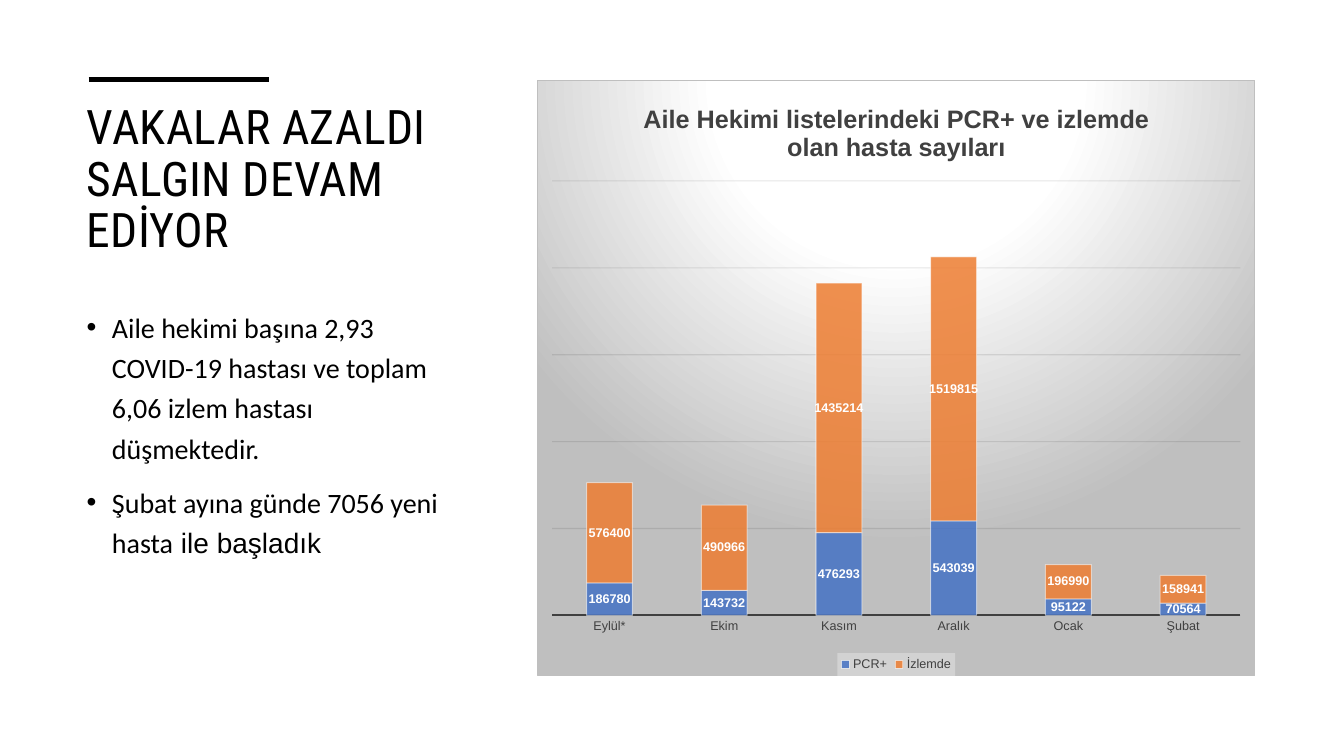
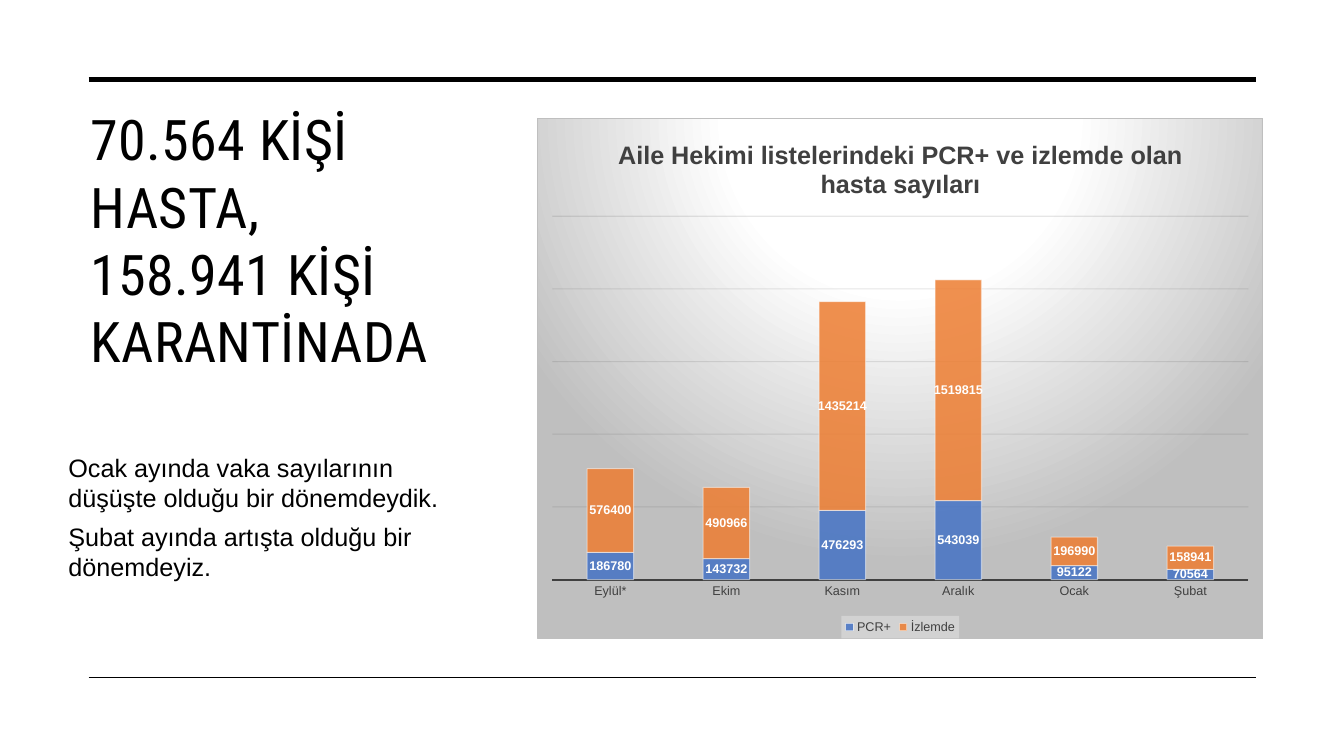
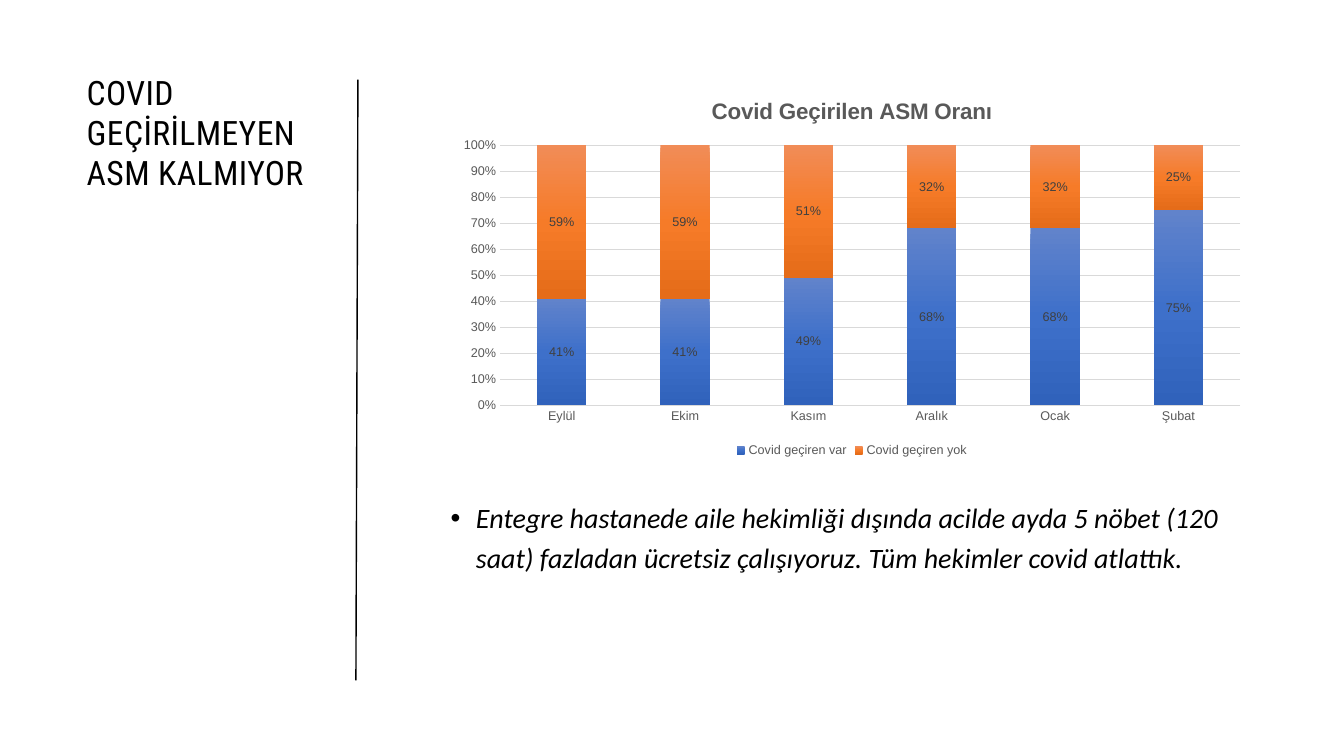
from lxml import etree
from pptx import Presentation
from pptx.chart.data import CategoryChartData
from pptx.dml.color import RGBColor
from pptx.enum.chart import XL_CHART_TYPE, XL_LABEL_POSITION, XL_LEGEND_POSITION, XL_TICK_MARK
from pptx.enum.shapes import MSO_CONNECTOR, MSO_SHAPE
from pptx.enum.text import MSO_ANCHOR, MSO_AUTO_SIZE, PP_ALIGN
from pptx.oxml import parse_xml
from pptx.oxml.ns import nsdecls, qn
from pptx.util import Pt

STACKED = XL_CHART_TYPE.COLUMN_STACKED
STACKED_100 = XL_CHART_TYPE.COLUMN_STACKED_100
CENTER_LABEL = XL_LABEL_POSITION.CENTER
BOTTOM = XL_LEGEND_POSITION.BOTTOM
NO_TICK = XL_TICK_MARK.NONE
STRAIGHT = MSO_CONNECTOR.STRAIGHT
RECTANGLE = MSO_SHAPE.RECTANGLE
TOP = MSO_ANCHOR.TOP
FIXED = MSO_AUTO_SIZE.NONE
LEFT = PP_ALIGN.LEFT

PX = 9144
TITLE_AND_CONTENT, TITLE_ONLY = 1, 5
TITLE_FONT, BODY_FONT, CHART_FONT = "Roboto Condensed", "Calibri", "Arial"

BLACK = RGBColor(0x00, 0x00, 0x00)
WHITE = RGBColor(0xFF, 0xFF, 0xFF)
INK = RGBColor(0x0D, 0x0D, 0x0D)
DARK_GREY = RGBColor(0x40, 0x40, 0x40)
MID_GREY = RGBColor(0x59, 0x59, 0x59)
SILVER = RGBColor(0xBF, 0xBF, 0xBF)
PALE_GREY = RGBColor(0xD9, 0xD9, 0xD9)
LEGEND_GREY = RGBColor(0xF2, 0xF2, 0xF2)
BLUE = RGBColor(0x44, 0x72, 0xC4)
ORANGE = RGBColor(0xED, 0x7D, 0x31)
BLUE_STOPS = (
    (0, RGBColor(0x61, 0x83, 0xCB)),
    (50, RGBColor(0x3E, 0x70, 0xCA)),
    (100, RGBColor(0x30, 0x62, 0xBB)),
)
ORANGE_STOPS = (
    (0, RGBColor(0xF1, 0x8C, 0x57)),
    (50, RGBColor(0xF6, 0x7B, 0x28)),
    (100, RGBColor(0xE5, 0x6C, 0x19)),
)
DOWNWARD = '<a:lin ang="5400000" scaled="0"/>'
SPOTLIGHT = (
    '<a:path path="circle"><a:fillToRect l="50000" t="-80000" '
    'r="50000" b="180000"/></a:path>'
)

MONTHS = ("Ekim", "Kasım", "Aralık", "Ocak", "Şubat")
CASE_TITLE = "Aile Hekimi listelerindeki PCR+ ve izlemde olan hasta sayıları"
CASES = {
    "PCR+": (186780, 143732, 476293, 543039, 95122, 70564),
    "İzlemde": (576400, 490966, 1435214, 1519815, 196990, 158941),
}
COVID_SHARES = {
    "Covid geçiren var": (0.41, 0.41, 0.49, 0.68, 0.68, 0.75),
    "Covid geçiren yok": (0.59, 0.59, 0.51, 0.32, 0.32, 0.25),
}


def px(*lengths):
    return [length * PX for length in lengths]


def place(shape, area):
    shape.left, shape.top, shape.width, shape.height = px(*area)


def style_font(font, name, size, color, bold=False, italic=False):
    font.name = name
    font.size = Pt(size)
    font.color.rgb = color
    font.bold = bold
    font.italic = italic


def set_frame(frame):
    frame.word_wrap = True
    frame.auto_size = FIXED
    frame.vertical_anchor = TOP


def set_title(page, text, area, size, line_spacing=1.0):
    title = page.shapes.title
    place(title, area)
    set_frame(title.text_frame)
    title.text_frame.text = text
    for para in title.text_frame.paragraphs:
        para.alignment = LEFT
        para.line_spacing = line_spacing
        for span in para.runs:
            style_font(span.font, TITLE_FONT, size, BLACK)
    for properties in title.element.iter(qn("a:rPr")):
        properties.set("spc", "30")


def set_bullets(page, items, area, italic=False):
    body = page.placeholders[1]
    place(body, area)
    set_frame(body.text_frame)
    body.text_frame.text = "\n".join(items)
    for para in body.text_frame.paragraphs:
        para.line_spacing = 1.2
        para.space_before = Pt(10)
        for span in para.runs:
            style_font(span.font, BODY_FONT, 20, BLACK, italic=italic)
    for properties in body.element.iter(qn("a:pPr")):
        properties.set("marL", str(25 * PX))
        properties.set("indent", str(-25 * PX))
        etree.SubElement(properties, qn("a:buFont"), typeface="Arial")
        etree.SubElement(properties, qn("a:buChar"), char="•")
    return body


def add_note(page, items, area):
    box = page.shapes.add_shape(RECTANGLE, *px(*area))
    box.shadow.inherit = False
    box.fill.solid()
    box.fill.fore_color.rgb = WHITE
    box.line.fill.background()
    set_frame(box.text_frame)
    box.text_frame.text = "\n".join(items)
    for para in box.text_frame.paragraphs:
        para.alignment = LEFT
        para.space_after = Pt(6)
        for span in para.runs:
            style_font(span.font, "Arial", 18, BLACK)


def add_rule(page, start, end, width):
    rule = page.shapes.add_connector(STRAIGHT, *px(*start, *end))
    rule.line.color.rgb = BLACK
    rule.line.width = Pt(width)
    etree.SubElement(rule.element.spPr, qn("a:effectLst"))


def solid_xml(color, opacity=100):
    return (
        f'<a:solidFill><a:srgbClr val="{color}">'
        f'<a:alpha val="{opacity * 1000}"/></a:srgbClr></a:solidFill>'
    )


def gradient_xml(stops, direction):
    marks = "".join(
        f'<a:gs pos="{position * 1000}"><a:srgbClr val="{color}"/></a:gs>'
        for position, color in stops
    )
    return f'<a:gradFill rotWithShape="1"><a:gsLst>{marks}</a:gsLst>{direction}</a:gradFill>'


def line_xml(color, opacity=100):
    return f'<a:ln w="{Pt(0.75)}">{solid_xml(color, opacity)}</a:ln>'


def chart_properties(fill="", line=""):
    return parse_xml(f'<c:spPr {nsdecls("c", "a")}>{fill}{line}</c:spPr>')


def style_series(chart, fills, line=""):
    for series, fill in zip(chart.element.iter(qn("c:ser")), fills):
        series.find(qn("c:tx")).addnext(chart_properties(fill, line))


def set_gridlines(chart, color, opacity=100):
    gridlines = next(chart.element.iter(qn("c:majorGridlines")))
    gridlines.append(chart_properties(line=line_xml(color, opacity)))


def add_stacked_chart(page, kind, area, title, title_size, first_month, values,
                      text_color, axis_color, axis_width, number_format):
    data = CategoryChartData(number_format=number_format)
    data.categories = (first_month, *MONTHS)
    for name, numbers in values.items():
        data.add_series(name, numbers)
    chart = page.shapes.add_chart(kind, *px(*area), data).chart
    style_font(chart.font, CHART_FONT, 10, BLACK)

    chart.has_title = True
    heading = chart.chart_title.text_frame
    heading.text = title
    style_font(heading.paragraphs[0].runs[0].font, CHART_FONT, title_size, text_color, bold=True)

    chart.has_legend = True
    chart.legend.position = BOTTOM
    chart.legend.include_in_layout = False
    style_font(chart.legend.font, CHART_FONT, 9, text_color)

    months = chart.category_axis
    months.major_tick_mark = NO_TICK
    months.format.line.color.rgb = axis_color
    months.format.line.width = Pt(axis_width)
    style_font(months.tick_labels.font, CHART_FONT, 9, text_color)
    chart.value_axis.minimum_scale = 0
    chart.value_axis.has_major_gridlines = True

    plot = chart.plots[0]
    plot.gap_width = 150
    plot.overlap = 100
    plot.vary_by_categories = False
    return chart


def label_series(chart, color, number_format, bold=False):
    for series in chart.plots[0].series:
        labels = series.data_labels
        labels.show_value = True
        labels.position = CENTER_LABEL
        labels.number_format = number_format
        labels.number_format_is_linked = False
        style_font(labels.font, CHART_FONT, 9, color, bold=bold)


def add_case_chart(page, area):
    chart = add_stacked_chart(page, STACKED, area, CASE_TITLE, 18, "Eylül*", CASES,
                              DARK_GREY, DARK_GREY, 1.5, "General")
    chart.value_axis.maximum_scale = 2500000
    chart.value_axis.major_unit = 500000
    chart.value_axis.visible = False
    set_gridlines(chart, INK, 10)
    style_series(chart, [solid_xml(color, 85) for color in (BLUE, ORANGE)], line_xml(WHITE, 50))
    label_series(chart, WHITE, "General", bold=True)
    backdrop = gradient_xml(((0, WHITE), (39, WHITE), (100, SILVER)), SPOTLIGHT)
    chart.element.find(qn("c:chart")).addnext(chart_properties(backdrop, line_xml(SILVER)))
    legend = next(chart.element.iter(qn("c:legend")))
    legend.find(qn("c:overlay")).addnext(chart_properties(solid_xml(LEGEND_GREY, 39)))


def add_share_chart(page, area):
    chart = add_stacked_chart(page, STACKED_100, area, "Covid Geçirilen ASM Oranı", 16,
                              "Eylül", COVID_SHARES, MID_GREY, PALE_GREY, 1, "0%")
    shares = chart.value_axis
    shares.maximum_scale = 1
    shares.major_unit = 0.1
    shares.major_tick_mark = NO_TICK
    shares.format.line.fill.background()
    shares.tick_labels.number_format = "0%"
    shares.tick_labels.number_format_is_linked = False
    style_font(shares.tick_labels.font, CHART_FONT, 9, MID_GREY)
    set_gridlines(chart, PALE_GREY)
    style_series(chart, [gradient_xml(stops, DOWNWARD) for stops in (BLUE_STOPS, ORANGE_STOPS)])
    label_series(chart, DARK_GREY, "0%")


def build_decline_page(deck):
    page = deck.slides.add_slide(deck.slide_layouts[TITLE_AND_CONTENT])
    set_title(page, "VAKALAR AZALDI\nSALGIN DEVAM EDİYOR", (76, 98, 398, 172), 34, 0.9)
    add_rule(page, (88, 79), (267, 79), 3.5)
    body = set_bullets(page, (
        "Aile hekimi başına 2,93 COVID-19 hastası ve toplam 6,06 izlem hastası düşmektedir.",
        "Şubat ayına günde 7056 yeni hasta",
    ), (76, 296, 392, 383))
    span = body.text_frame.paragraphs[1].add_run()
    span.text = " ile başladık"
    style_font(span.font, "Arial", 20, BLACK)
    add_case_chart(page, (533, 79, 712, 592))


def build_quarantine_page(deck):
    page = deck.slides.add_slide(deck.slide_layouts[TITLE_ONLY])
    set_title(page, "70.564 KİŞİ HASTA,\n158.941 KİŞİ KARANTİNADA", (80, 99, 400, 482), 40)
    add_rule(page, (88, 79), (1246, 79), 3.5)
    add_rule(page, (88, 672), (1246, 672), 1)
    add_note(page, (
        "Ocak ayında vaka sayılarının düşüşte olduğu bir dönemdeydik.",
        "Şubat ayında artışta olduğu bir dönemdeyiz.",
    ), (58, 444, 423, 140))
    add_case_chart(page, (533, 117, 720, 517))


def build_share_page(deck):
    page = deck.slides.add_slide(deck.slide_layouts[TITLE_AND_CONTENT])
    set_title(page, "COVID GEÇİRİLMEYEN ASM KALMIYOR", (76, 66, 259, 609), 24)
    add_rule(page, (353, 675), (355, 79), 1)
    set_bullets(page, (
        "Entegre hastanede aile hekimliği dışında acilde ayda 5 nöbet (120 saat) "
        "fazladan ücretsiz çalışıyoruz. Tüm hekimler covid atlattık.",
    ), (437, 485, 817, 195), italic=True)
    add_share_chart(page, (444, 79, 802, 379))


def main():
    deck = Presentation()
    deck.slide_width, deck.slide_height = px(1333, 750)
    build_decline_page(deck)
    build_quarantine_page(deck)
    build_share_page(deck)
    deck.save("out.pptx")


if __name__ == "__main__":
    main()
